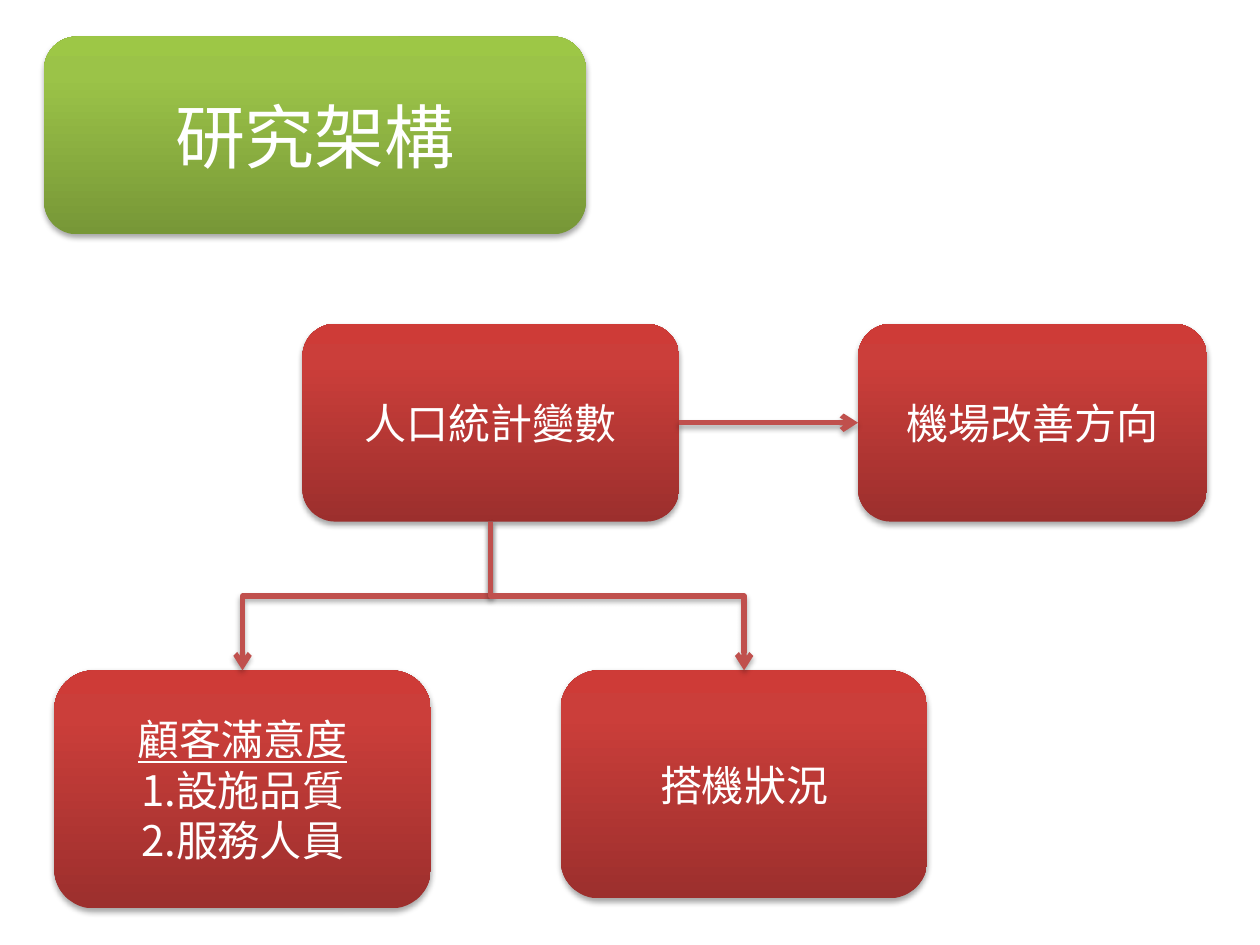
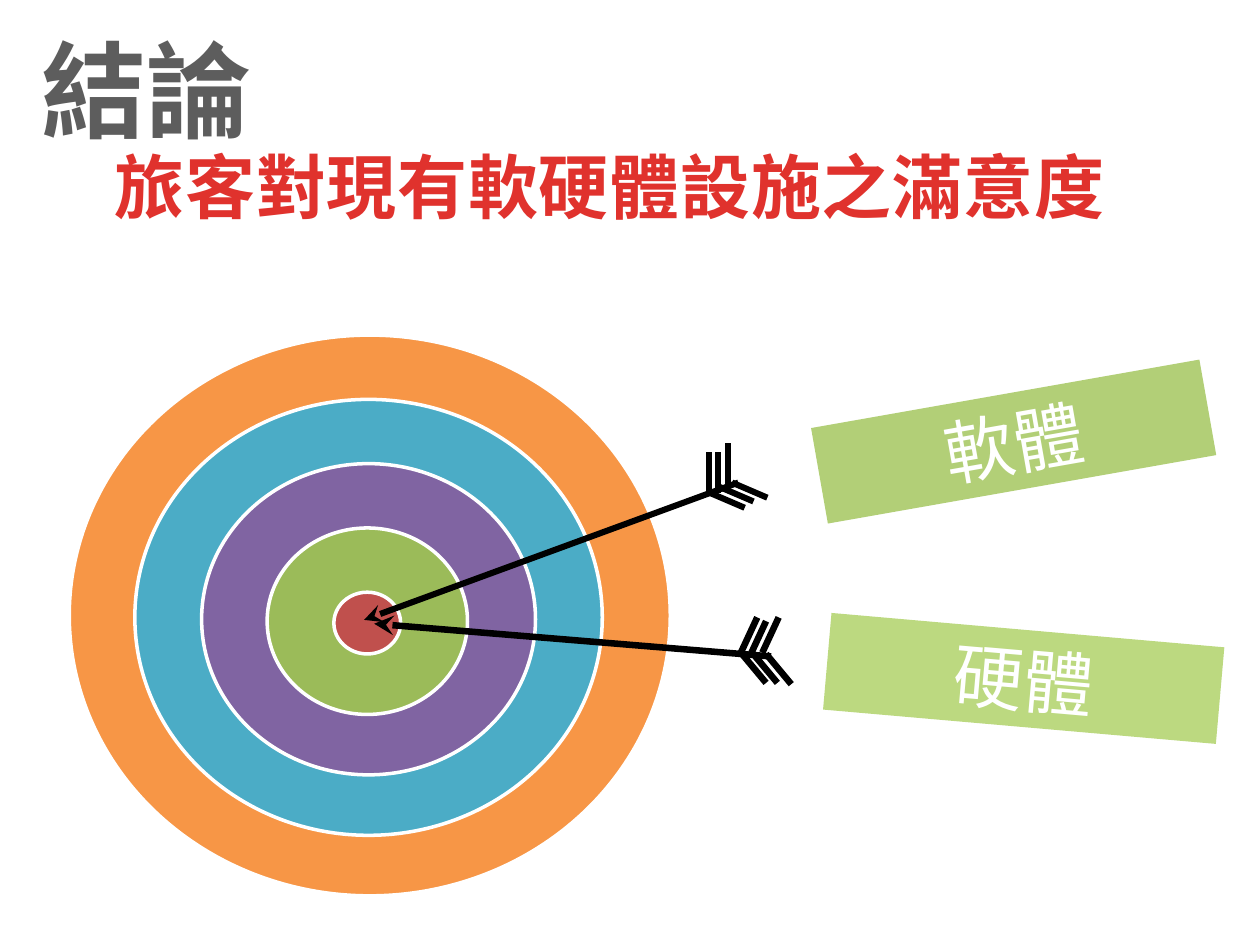
"""Build two slides: a research framework diagram and a target with its conclusion."""
from lxml.etree import SubElement
from pptx import Presentation
from pptx.dml.color import RGBColor
from pptx.enum.shapes import MSO_CONNECTOR, MSO_SHAPE
from pptx.enum.text import MSO_ANCHOR, PP_ALIGN
from pptx.oxml import parse_xml
from pptx.oxml.ns import nsdecls, qn
from pptx.util import Pt

PX = 9144
FONT = "Noto Sans CJK SC"
WHITE, BLACK = "FFFFFF", "000000"
TITLE_GREY, HEADLINE_RED, ARROW_RED = "5D5D5D", "E0322D", "C0504D"
RED_STOPS = [(0, "9C2F2D"), (80, "CB3E3A"), (100, "CE3B37")]
GREEN_STOPS = [(0, "779737"), (80, "9BC348"), (100, "9DC746")]
SHADOW = (
    f'<a:outerShdw {nsdecls("a")} blurRad="40000" dist="23000" dir="5400000" rotWithShape="0">'
    f'<a:srgbClr val="{BLACK}"><a:alpha val="35000"/></a:srgbClr></a:outerShdw>'
)


def write_text(shape, text, size, color, align=PP_ALIGN.CENTER, bold=False):
    frame = shape.text_frame
    frame.word_wrap = True
    frame.text = text
    for paragraph in frame.paragraphs:
        paragraph.alignment = align
        for run in paragraph.runs:
            run.font.size = Pt(size)
            run.font.bold = bold
            run.font.name = FONT
            run.font.color.rgb = RGBColor.from_string(color)
            SubElement(run.font._element, qn("a:ea")).set("typeface", FONT)


def add_line(shapes, start, end, color, width, head=None, shadow=False, kind=MSO_CONNECTOR.STRAIGHT):
    connector = shapes.add_connector(kind, *[value * PX for value in (*start, *end)])
    connector.line.color.rgb = RGBColor.from_string(color)
    connector.line.width = Pt(width)
    if head:
        SubElement(connector.line._get_or_add_ln(), qn("a:tailEnd")).set("type", head)
    effects = SubElement(connector._element.spPr, qn("a:effectLst"))
    if shadow:
        effects.append(parse_xml(SHADOW))
    return connector


presentation = Presentation()
presentation.slide_width = 1000 * PX
presentation.slide_height = 750 * PX
blank = presentation.slide_layouts[6]

slide = presentation.slides.add_slide(blank)
rounded = MSO_SHAPE.ROUNDED_RECTANGLE
boxes = []
for preset, bounds, stops, text, size in [
    (rounded, (240, 257, 299, 157), RED_STOPS, "人口統計變數", 24),
    (rounded, (681, 257, 277, 157), RED_STOPS, "機場改善方向", 24),
    (rounded, (43, 532, 299, 189), RED_STOPS, "顧客滿意度\n1.設施品質\n2.服務人員", 24),
    (rounded, (445, 532, 291, 181), RED_STOPS, "搭機狀況", 24),
    (MSO_SHAPE.FLOWCHART_ALTERNATE_PROCESS, (35, 29, 430, 157), GREEN_STOPS, "研究架構", 40),
]:
    box = slide.shapes.add_shape(preset, *[value * PX for value in bounds])
    box.fill.gradient()
    box.fill.gradient_angle = 90
    stop_list = box._element.spPr.find(qn("a:gradFill")).find(qn("a:gsLst"))
    for stop in list(stop_list):
        stop_list.remove(stop)
    for position, color in stops:
        stop = SubElement(stop_list, qn("a:gs"), pos=str(position * 1000))
        SubElement(stop, qn("a:srgbClr"), val=color)
    box.line.fill.background()
    box.shadow.inherit = False
    box._element.spPr.find(qn("a:effectLst")).append(parse_xml(SHADOW))
    write_text(box, text, size, WHITE)
    boxes.append(box)

population, improvement, satisfaction, flight = boxes[:4]
satisfaction.text_frame.paragraphs[0].runs[0].font.underline = True

for target, rotation, flip in [(satisfaction, 90, "0"), (flight, 270, "1")]:
    elbow = add_line(slide.shapes, (390, 414), (390, 532), ARROW_RED, 3, "arrow", True, MSO_CONNECTOR.ELBOW)
    elbow.begin_connect(population, 2)
    elbow.end_connect(target, 0)
    left, top, width, height = elbow.left, elbow.top, elbow.width, elbow.height
    elbow.left = left + (width - height) // 2
    elbow.top = top + (height - width) // 2
    elbow.width, elbow.height = height, width
    transform = elbow._element.spPr.find(qn("a:xfrm"))
    transform.set("rot", str(rotation * 60000))
    transform.set("flipH", flip)

arrow = add_line(slide.shapes, (539, 336), (681, 336), ARROW_RED, 3, "arrow", True)
arrow.begin_connect(population, 3)
arrow.end_connect(improvement, 1)

slide = presentation.slides.add_slide(blank)
for bounds, text, size, color, align, anchor in [
    ((23, 8, 900, 125), "結論", 60, TITLE_GREY, PP_ALIGN.LEFT, MSO_ANCHOR.MIDDLE),
    ((23, 109, 922, 77), "旅客對現有軟硬體設施之滿意度", 40, HEADLINE_RED, PP_ALIGN.CENTER, MSO_ANCHOR.TOP),
]:
    heading = slide.shapes.add_textbox(*[value * PX for value in bounds])
    write_text(heading, text, size, color, align, bold=True)
    heading.text_frame.vertical_anchor = anchor
heading.text_frame.paragraphs[0].runs[0].font._element.set("spc", "50")

rings = slide.shapes.add_group_shape()
for index, color in enumerate(["F79646", "4BACC6", "8064A2", "9BBB59", "C0504D"]):
    bounds = (55 + 105 * index // 2, 266 + 51 * index, 477 - 106 * index, 445 - 99 * index)
    ring = rings.shapes.add_shape(MSO_SHAPE.OVAL, *[value * PX for value in bounds])
    ring.fill.solid()
    ring.fill.fore_color.rgb = RGBColor.from_string(color)
    ring.line.color.rgb = RGBColor.from_string(WHITE)
    ring.line.width = Pt(2)
    ring.shadow.inherit = False

for start, end, width, feathers in [
    ((586, 383), (289, 492), 3.5, [
        ((0, 32), [(578, 352), (570, 359), (563, 359)]),
        ((28, 12), [(563, 391), (581, 383), (570, 386)]),
    ]),
    ((612, 521), (297, 495), 3.75, [
        ((-13, 28), [(618, 490), (608, 493), (601, 490)]),
        ((20, 24), [(588, 518), (608, 519), (597, 518)]),
    ]),
]:
    dart = slide.shapes.add_group_shape()
    add_line(dart.shapes, start, end, BLACK, width, "stealth")
    for (run_x, run_y), roots in feathers:
        for x, y in roots:
            add_line(dart.shapes, (x, y), (x + run_x, y + run_y), BLACK, width)

for left, top, rotation, color, text in [
    (648, 312, -10, "B2CF77", "軟體"),
    (656, 500, 5, "BCD980", "硬體"),
]:
    label = slide.shapes.add_shape(MSO_SHAPE.RECTANGLE, left * PX, top * PX, 313 * PX, 77 * PX)
    label.rotation = rotation
    label.fill.solid()
    label.fill.fore_color.rgb = RGBColor.from_string(color)
    label.line.fill.background()
    label.shadow.inherit = False
    write_text(label, text, 40, WHITE)

presentation.save("out.pptx")
